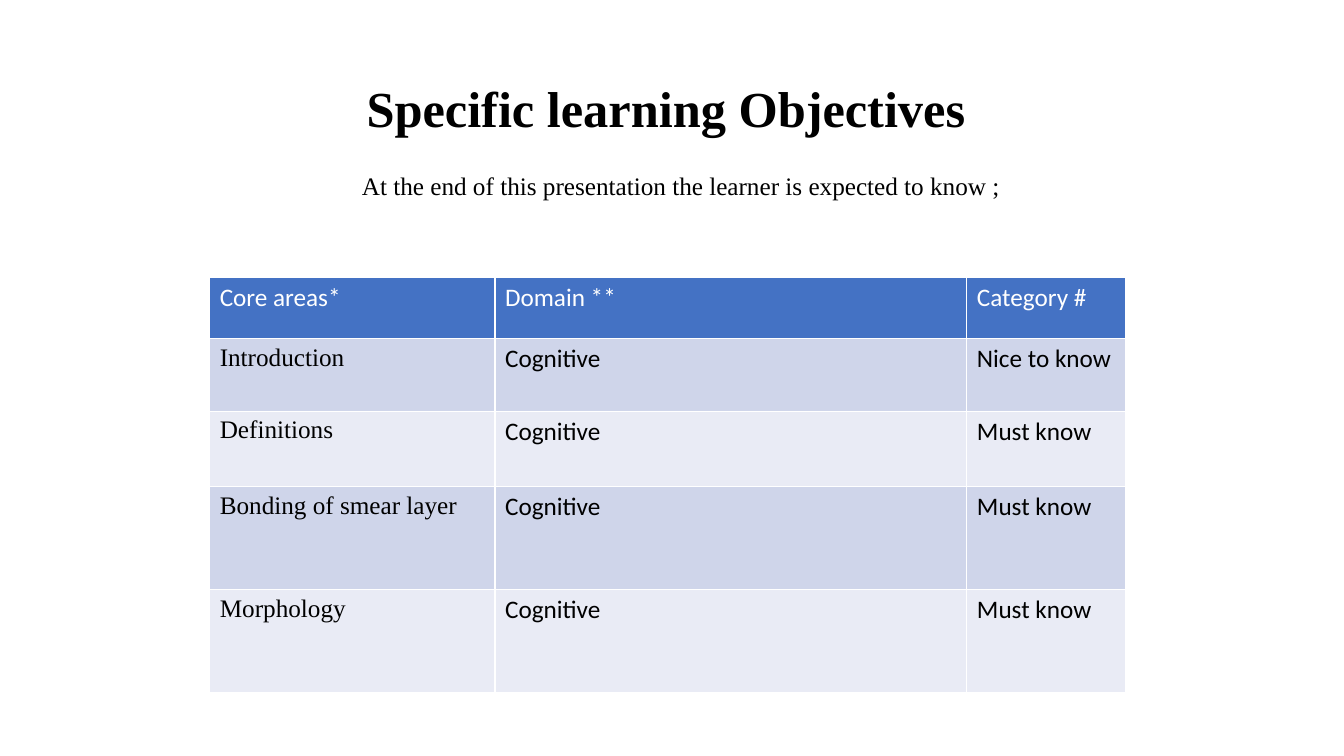
from dataclasses import dataclass

from lxml.etree import SubElement
from pptx import Presentation
from pptx.dml.color import RGBColor
from pptx.enum.text import MSO_ANCHOR as Anchor, PP_ALIGN as Align
from pptx.oxml.ns import qn
from pptx.slide import Slide
from pptx.table import _Cell as Cell
from pptx.text.text import TextFrame
from pptx.util import Inches, Pt

BLACK = RGBColor(0x00, 0x00, 0x00)
WHITE = RGBColor(0xFF, 0xFF, 0xFF)
HEADER_BLUE = RGBColor(0x44, 0x72, 0xC4)
BANDS = (RGBColor(0xCF, 0xD5, 0xEA), RGBColor(0xE9, 0xEB, 0xF5))
SERIF = "Times New Roman"
SANS = "Calibri"


@dataclass(frozen=True)
class Heading:
    text: str
    left: float
    top: float
    width: float
    height: float
    size: int
    bold: bool = False
    anchor: Anchor = Anchor.TOP
    space_before: int = 0


@dataclass(frozen=True)
class Objective:
    area: str
    domain: str
    category: str
    height: float


HEADINGS = (
    Heading("Specific learning Objectives ", 2.42, 0.42, 8.5, 1, 36, bold=True, anchor=Anchor.BOTTOM),
    Heading("At the end of this presentation the learner is expected to know ;",
            2.42, 1.67, 8.67, 5.17, 18, space_before=10),
)
OBJECTIVES = (
    Objective("Core areas*", "Domain **", "Category #", 0.61),
    Objective("Introduction", "Cognitive", "Nice to know", 0.72),
    Objective("Definitions", "Cognitive", "Must know", 0.75),
    Objective("Bonding of smear layer", "Cognitive", "Must know", 1.02),
    Objective("Morphology", "Cognitive", "Must know", 1.02),
)
COLUMN_WIDTHS = (2.83, 4.68, 1.57)


def write(frame: TextFrame, text: str, *, font: str = SERIF, size: int = 18,
          color: RGBColor = BLACK, bold: bool = False, align: Align = Align.LEFT,
          line_spacing: float = 1.0, space_before: int = 0) -> None:
    para = frame.paragraphs[0]
    para.alignment = align
    para.line_spacing = line_spacing
    para.space_before = Pt(space_before)
    span = para.add_run()
    span.text = text
    span.font.name = font
    span.font.size = Pt(size)
    span.font.bold = bold
    span.font.color.rgb = color


def draw_heading(page: Slide, heading: Heading) -> None:
    box = page.shapes.add_textbox(Inches(heading.left), Inches(heading.top),
                                  Inches(heading.width), Inches(heading.height))
    frame = box.text_frame
    frame.word_wrap = True
    frame.vertical_anchor = heading.anchor
    write(frame, heading.text, size=heading.size, bold=heading.bold, align=Align.CENTER,
          line_spacing=0.9, space_before=heading.space_before)


def paint_cell(cell: Cell, fill: RGBColor) -> None:
    """Fill the cell and rule its four sides in white."""
    cell.fill.solid()
    cell.fill.fore_color.rgb = fill
    properties = cell._tc.get_or_add_tcPr()
    for index, side in enumerate(("a:lnL", "a:lnR", "a:lnT", "a:lnB")):
        line = SubElement(properties, qn(side), w=str(Pt(1)))
        SubElement(SubElement(line, qn("a:solidFill")), qn("a:srgbClr"), val=str(WHITE))
        properties.insert(index, line)


def draw_objectives(page: Slide) -> None:
    table = page.shapes.add_table(
        len(OBJECTIVES), len(COLUMN_WIDTHS), Inches(2.08), Inches(2.75),
        Inches(sum(COLUMN_WIDTHS)), Inches(sum(row.height for row in OBJECTIVES))).table
    for column, width in zip(table.columns, COLUMN_WIDTHS):
        column.width = Inches(width)
    for row, objective in enumerate(OBJECTIVES):
        table.rows[row].height = Inches(objective.height)
        is_header = row == 0
        fill = HEADER_BLUE if is_header else BANDS[(row - 1) % 2]
        for column, text in enumerate((objective.area, objective.domain, objective.category)):
            cell = table.cell(row, column)
            paint_cell(cell, fill)
            write(cell.text_frame, text, font=SANS if is_header or column else SERIF,
                  color=WHITE if is_header else BLACK)


def main() -> None:
    deck = Presentation()
    deck.slide_width, deck.slide_height = Inches(13.33), Inches(7.5)
    page = deck.slides.add_slide(deck.slide_layouts[6])
    for heading in HEADINGS:
        draw_heading(page, heading)
    draw_objectives(page)
    deck.save("out.pptx")


if __name__ == "__main__":
    main()
